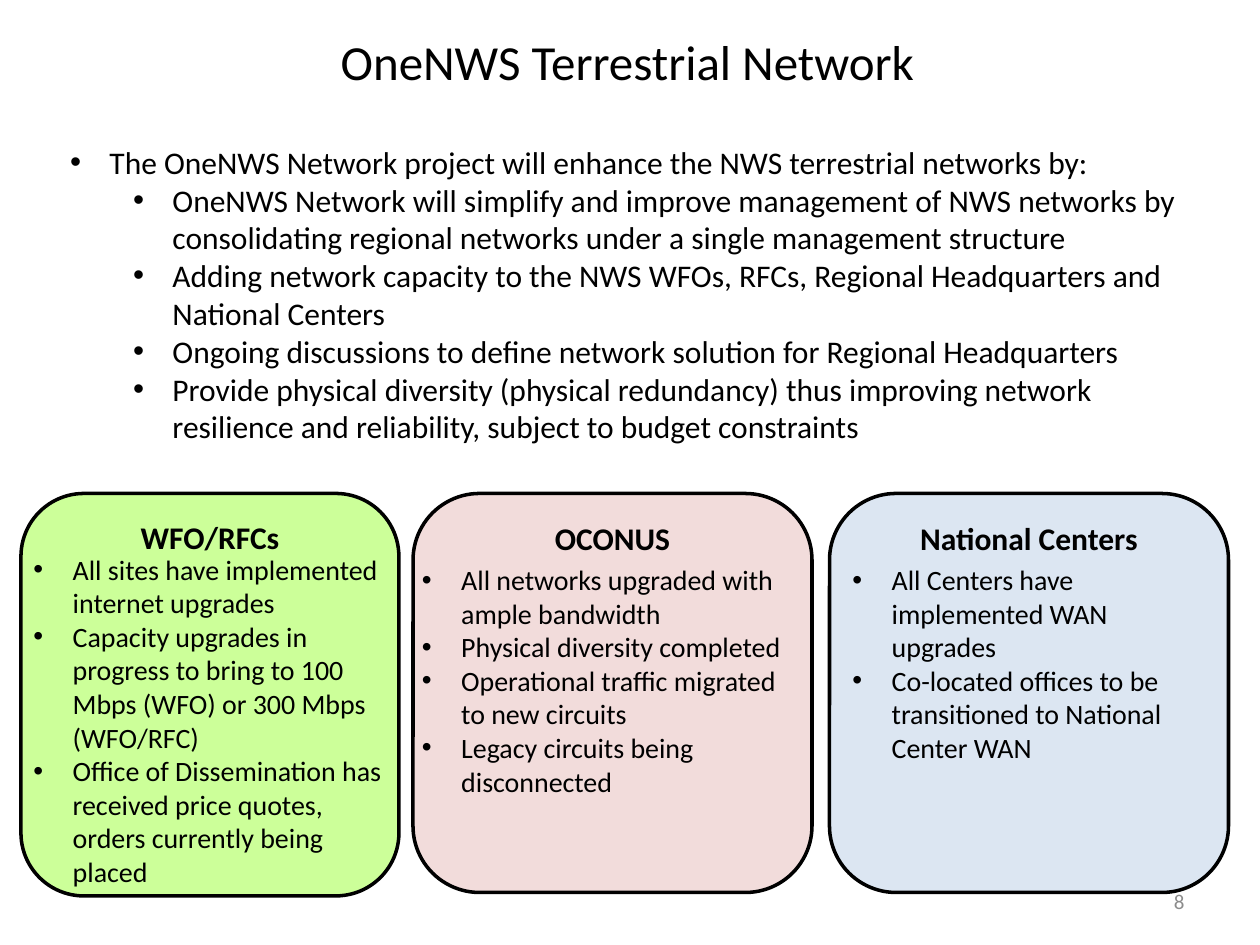
"""Build the OneNWS Terrestrial Network slide."""
from dataclasses import dataclass

from lxml import etree
from pptx import Presentation
from pptx.dml.color import RGBColor
from pptx.enum.shapes import MSO_SHAPE
from pptx.enum.text import MSO_ANCHOR, MSO_AUTO_SIZE, PP_ALIGN
from pptx.oxml.ns import qn
from pptx.util import Pt

ROUNDED = MSO_SHAPE.ROUNDED_RECTANGLE
TOP, MIDDLE = MSO_ANCHOR.TOP, MSO_ANCHOR.MIDDLE
CENTER, RIGHT = PP_ALIGN.CENTER, PP_ALIGN.RIGHT
NO_FIT = MSO_AUTO_SIZE.NONE
TITLE_ONLY = 5


@dataclass(frozen=True)
class Theme:
    font: str = "Calibri"
    ink: str = "000000"
    muted: str = "8C8C8C"
    green: str = "CCFF99"
    rose: str = "F2DCDB"
    blue: str = "DCE6F2"
    title: int = 28
    body: int = 18
    detail: int = 16
    footer: int = 12
    outline: int = 2
    hanging: float = 22.5
    level_step: int = 36


class SlideBuilder:
    def __init__(self, slide, theme):
        self.slide = slide
        self.theme = theme

    def style(self, paragraph, size, color=None, bold=False, align=None):
        font = paragraph.font
        font.name, font.size, font.bold = self.theme.font, Pt(size), bold
        font.color.rgb = RGBColor.from_string(color or self.theme.ink)
        if align is not None:
            paragraph.alignment = align

    def title(self, text, left, top, width, height):
        heading = self.slide.shapes.title
        heading.left, heading.top = Pt(left), Pt(top)
        heading.width, heading.height = Pt(width), Pt(height)
        frame = heading.text_frame
        frame.text = text
        frame.auto_size, frame.vertical_anchor = NO_FIT, TOP
        frame.paragraphs[0].line_spacing = 0.9
        self.style(frame.paragraphs[0], self.theme.title, align=CENTER)

    def text_frame(self, left, top, width, height):
        box = self.slide.shapes.add_textbox(Pt(left), Pt(top), Pt(width), Pt(height))
        box.text_frame.word_wrap = True
        return box.text_frame

    def page_number(self, number, left, top, width, height):
        frame = self.text_frame(left, top, width, height)
        frame.vertical_anchor = MIDDLE
        frame.text = number
        self.style(frame.paragraphs[0], self.theme.footer, self.theme.muted, align=RIGHT)

    def card(self, heading, fill, left, top, width, height):
        card = self.slide.shapes.add_shape(ROUNDED, Pt(left), Pt(top), Pt(width), Pt(height))
        card.shadow.inherit = False
        card.fill.solid()
        card.fill.fore_color.rgb = RGBColor.from_string(fill)
        card.line.color.rgb = RGBColor.from_string(self.theme.ink)
        card.line.width = Pt(self.theme.outline)
        frame = card.text_frame
        frame.vertical_anchor = TOP
        frame.text = heading
        self.style(frame.paragraphs[0], self.theme.body, bold=True, align=CENTER)

    def bullets(self, items, size, left, top, width, height):
        frame = self.text_frame(left, top, width, height)
        frame.text = "\n".join(text for _, text in items)
        for paragraph, (level, _) in zip(frame.paragraphs, items):
            paragraph.level = level
            self.style(paragraph, size)
            hanging = Pt(self.theme.hanging)
            properties = paragraph._p.get_or_add_pPr()
            properties.set("marL", str(hanging + Pt(level * self.theme.level_step)))
            properties.set("indent", str(-hanging))
            bullet_font = etree.Element(qn("a:buFont"), typeface="Arial")
            bullet = etree.Element(qn("a:buChar"), char="•")
            position = 0
            for mark in (bullet_font, bullet):
                properties.insert(position, mark)
                position += 1


GOALS = [
    (0, "The OneNWS Network project will enhance the NWS terrestrial networks by:"),
    (1, "OneNWS Network will simplify and improve management of NWS networks by "
        "consolidating regional networks under a single management structure"),
    (1, "Adding network capacity to the NWS WFOs, RFCs, Regional Headquarters "
        "and National Centers"),
    (1, "Ongoing discussions to define network solution for Regional Headquarters"),
    (1, "Provide physical diversity (physical redundancy) thus improving network "
        "resilience and reliability, subject to budget constraints"),
]

THEME = Theme()

SITES = [
    ("WFO/RFCs", THEME.green, (12, 282, 216, 230), (12, 312, 216, 201), [
        "All sites have implemented internet upgrades",
        "Capacity upgrades in progress to bring to 100 Mbps (WFO) or 300 Mbps (WFO/RFC)",
        "Office of Dissemination has received price quotes, orders currently being placed",
    ]),
    ("OCONUS", THEME.rose, (236, 282, 228, 228), (234, 318, 222, 143), [
        "All networks upgraded with ample bandwidth",
        "Physical diversity completed",
        "Operational traffic migrated to new circuits",
        "Legacy circuits being disconnected",
    ]),
    ("National Centers", THEME.blue, (474, 282, 228, 228), (480, 318, 216, 143), [
        "All Centers have implemented WAN upgrades",
        "Co-located offices to be transitioned to National Center WAN",
    ]),
]


def main():
    deck = Presentation()
    deck.slide_width, deck.slide_height = Pt(720), Pt(540)
    slide = deck.slides.add_slide(deck.slide_layouts[TITLE_ONLY])
    builder = SlideBuilder(slide, THEME)
    builder.page_number("8", 516, 500.5, 168, 28.75)
    builder.title("OneNWS Terrestrial Network", 48, 18, 621, 48)
    builder.bullets(GOALS, THEME.body, 33, 78, 654, 181)
    for heading, fill, card_area, list_area, points in SITES:
        builder.card(heading, fill, *card_area)
        builder.bullets([(0, point) for point in points], THEME.detail, *list_area)
    deck.save("out.pptx")


if __name__ == "__main__":
    main()
